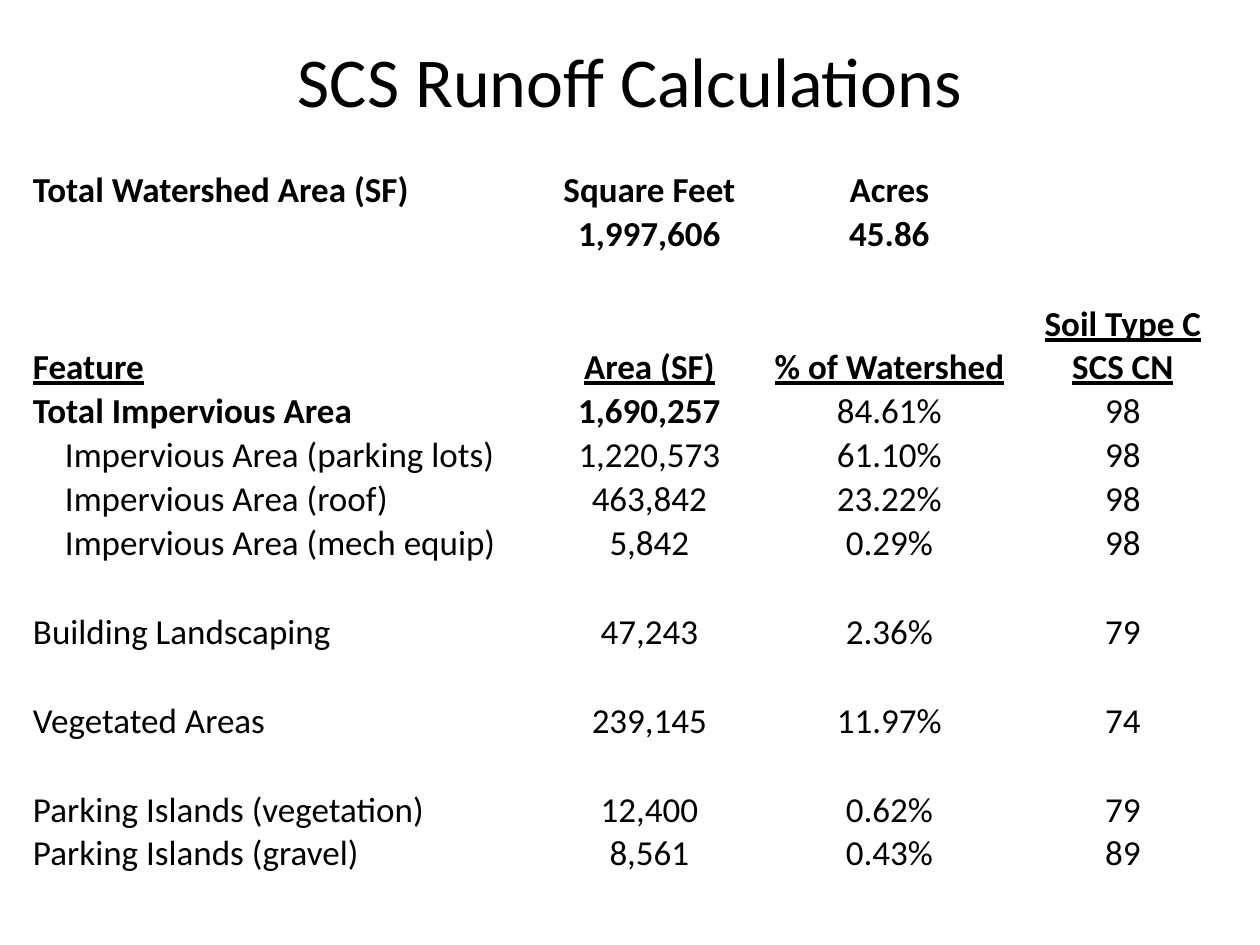
from dataclasses import dataclass

from pptx import Presentation
from pptx import util as u
from pptx.dml import color
from pptx.enum import text

PX = 914400 // 126
FONT = "Calibri"
BLACK = "000000"
COLUMN_WIDTHS = (515, 205, 275, 192)
ROW_HEIGHT = 44
BLANK_HEIGHT = 45
HEADER_HEIGHT = 88
CELL_MARGIN = 1
DETAIL_INDENT = 32


@dataclass(frozen=True)
class Row:
    values: tuple[str, ...] = ("", "", "", "")
    height: int = ROW_HEIGHT
    bold_columns: int = 0
    underline: bool = False
    indent: int = 0


BLANK = Row(height=BLANK_HEIGHT)
ROWS = (
    Row(("Total Watershed Area (SF)", "Square Feet", "Acres", ""), bold_columns=4),
    Row(("", "1,997,606", "45.86", ""), bold_columns=4),
    BLANK,
    Row(("Feature", "Area (SF)", "% of Watershed", "Soil Type C SCS CN"),
        height=HEADER_HEIGHT, bold_columns=4, underline=True),
    Row(("Total Impervious Area", "1,690,257", "84.61%", "98"), bold_columns=2),
    Row(("Impervious Area (parking lots)", "1,220,573", "61.10%", "98"), indent=DETAIL_INDENT),
    Row(("Impervious Area (roof)", "463,842", "23.22%", "98"), indent=DETAIL_INDENT),
    Row(("Impervious Area (mech equip)", "5,842", "0.29%", "98"), indent=DETAIL_INDENT),
    BLANK,
    Row(("Building Landscaping", "47,243", "2.36%", "79")),
    BLANK,
    Row(("Vegetated Areas", "239,145", "11.97%", "74")),
    BLANK,
    Row(("Parking Islands (vegetation)", "12,400", "0.62%", "79")),
    Row(("Parking Islands (gravel)", "8,561", "0.43%", "89")),
)


def px(length: int) -> u.Emu:
    return u.Emu(length * PX)


def rgb(value: str) -> color.RGBColor:
    return color.RGBColor.from_string(value)


def write(frame, words: str, *, size: int = 20, bold: bool = False,
          underline: bool = False, centred: bool = True) -> None:
    paragraph = frame.paragraphs[0]
    paragraph.alignment = text.PP_ALIGN.CENTER if centred else text.PP_ALIGN.LEFT
    run = paragraph.add_run()
    run.text = words
    run.font.name = FONT
    run.font.size = u.Pt(size)
    run.font.bold = bold
    run.font.underline = underline
    run.font.color.rgb = rgb(BLACK)


def draw_title(slide, words: str) -> None:
    title = slide.shapes.add_textbox(px(63), px(0), px(1134), px(158))
    title.text_frame.word_wrap = True
    title.text_frame.vertical_anchor = text.MSO_ANCHOR.MIDDLE
    write(title.text_frame, words, size=40)


def fill_cell(cell, row: Row, column: int) -> None:
    first = column == 0
    cell.fill.background()
    cell.vertical_anchor = text.MSO_ANCHOR.BOTTOM
    cell.margin_left = px(CELL_MARGIN + (row.indent if first else 0))
    cell.margin_right = cell.margin_top = px(CELL_MARGIN)
    cell.margin_bottom = px(0)
    if row.values[column]:
        write(cell.text_frame, row.values[column], bold=column < row.bold_columns,
              underline=row.underline, centred=not first)


def draw_runoff_table(slide, rows: tuple[Row, ...]) -> None:
    runoff = slide.shapes.add_table(
        len(rows), len(COLUMN_WIDTHS), px(32), px(168),
        px(sum(COLUMN_WIDTHS)), px(sum(row.height for row in rows))).table
    runoff.first_row = False
    runoff.horz_banding = False
    for column, width in enumerate(COLUMN_WIDTHS):
        runoff.columns[column].width = px(width)
    for index, row in enumerate(rows):
        runoff.rows[index].height = px(row.height)
        for column in range(len(COLUMN_WIDTHS)):
            fill_cell(runoff.cell(index, column), row, column)


def main() -> None:
    deck = Presentation()
    deck.slide_width, deck.slide_height = px(1260), px(945)
    slide = deck.slides.add_slide(deck.slide_layouts[6])
    draw_title(slide, "SCS Runoff Calculations")
    draw_runoff_table(slide, ROWS)
    deck.save("out.pptx")


if __name__ == "__main__":
    main()
